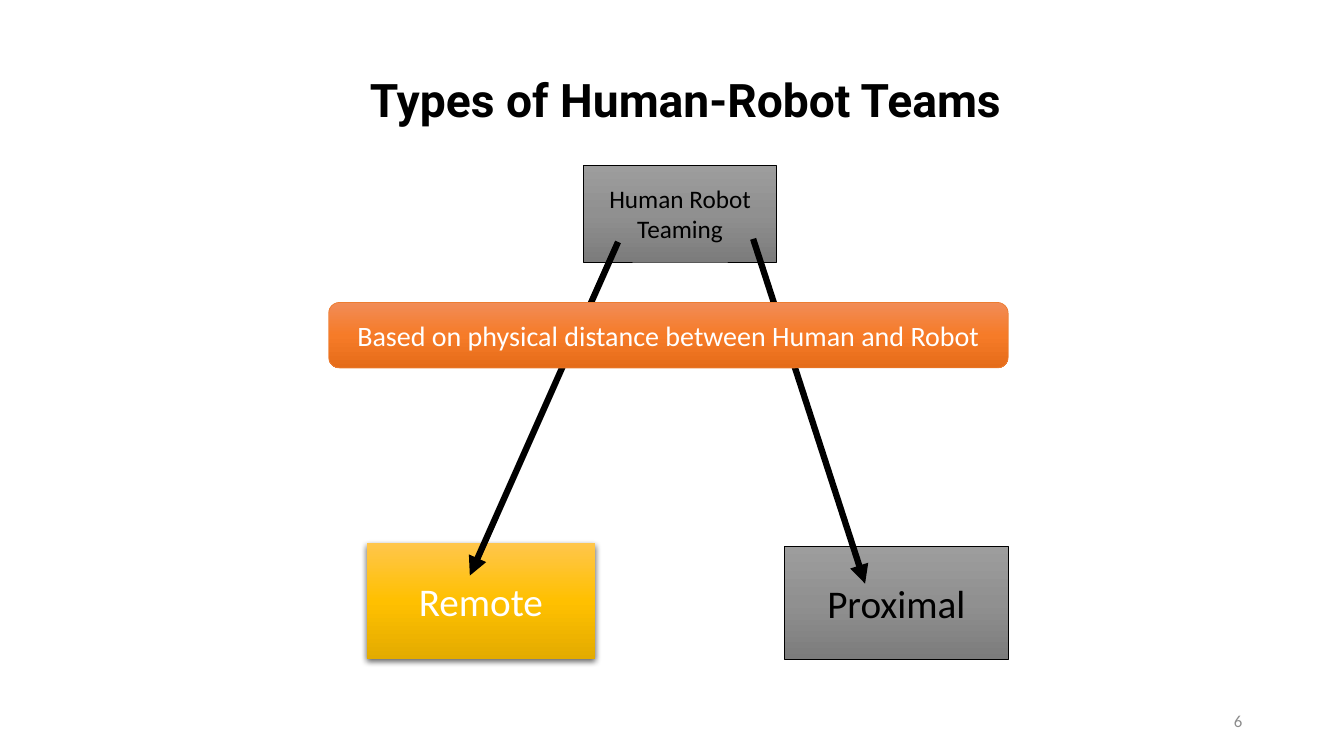
import copy

import lxml.etree
import pptx
import pptx.dml.color
import pptx.enum.shapes
import pptx.enum.text
import pptx.oxml.ns
import pptx.util

SHAPE = pptx.enum.shapes.MSO_SHAPE
ALIGN = pptx.enum.text.PP_ALIGN
qn = pptx.oxml.ns.qn

EMU_PER_PX = 9144  # 100 px to the inch
SLIDE_SIZE = (1333, 750)

GREY = ("9D9D9D", "909090", "7C7C7C")
GOLD = ("FFC64B", "FFC000", "E3AB00")
ORANGE = ("F18C57", "F67B28", "E56C19")

TITLE = ("Types of Human-Robot Teams", (269, 30, 822, 144))
PAGE_NUMBER = ("6", (942, 695, 300, 40))

# text, preset, (left, top, width, height), gradient, line, font size, font colour
TEAM_BOXES = [
    ("Human Robot Teaming", SHAPE.RECTANGLE, (579, 164, 191, 96), GREY, "000000", 18, "000000"),
    ("Remote", SHAPE.RECTANGLE, (364, 539, 226, 115), GOLD, None, 28, "FFFFFF"),
    ("Proximal", SHAPE.RECTANGLE, (778, 542, 222, 112), GREY, "000000", 28, "000000"),
]
CRITERION = ("Based on physical distance between Human and Robot", SHAPE.ROUNDED_RECTANGLE,
             (326, 300, 674, 65), ORANGE, "ED7D31", 20, "FFFFFF")
ARROWS = [(613, 240, 466, 571), (747, 237, 858, 579)]


def px(*lengths):
    return [pptx.util.Emu(length * EMU_PER_PX) for length in lengths]


def rgb(colour):
    return pptx.dml.color.RGBColor.from_string(colour)


def write(shape, text, align, size, colour, font_name="Calibri"):
    frame = shape.text_frame
    frame.word_wrap = True
    frame.auto_size = pptx.enum.text.MSO_AUTO_SIZE.NONE
    frame.vertical_anchor = pptx.enum.text.MSO_ANCHOR.MIDDLE
    frame.text = text
    para = frame.paragraphs[0]
    para.alignment = align
    para.font.name = font_name
    para.font.size = pptx.util.Pt(size)
    para.font.color.rgb = rgb(colour)
    return para


def fill_gradient(shape, colours):
    """Fill with three evenly spaced stops, from top to bottom."""
    shape.fill.gradient()
    shape.fill.gradient_angle = 270
    stop_list = shape._element.spPr.find(".//" + qn("a:gsLst"))
    stop_list.insert(1, copy.deepcopy(stop_list[0]))
    for index, (stop, colour) in enumerate(zip(shape.fill.gradient_stops, colours)):
        stop.position = index / 2
        stop.color.rgb = rgb(colour)


def add_drop_shadow(shape):
    effects = shape._element.spPr.find(qn("a:effectLst"))
    shadow = lxml.etree.SubElement(effects, qn("a:outerShdw"), blurRad="57150", dist="19050",
                                   dir="5400000", algn="ctr", rotWithShape="0")
    colour = lxml.etree.SubElement(shadow, qn("a:srgbClr"), val="000000")
    lxml.etree.SubElement(colour, qn("a:alpha"), val="63000")


def add_box(page, text, preset, place, gradient, line, size, colour):
    """Draw a gradient box; one without a line gets a drop shadow."""
    box = page.shapes.add_shape(preset, *px(*place))
    box.shadow.inherit = False
    fill_gradient(box, gradient)
    if line:
        box.line.color.rgb = rgb(line)
        box.line.width = pptx.util.Pt(0.5)
    else:
        box.line.fill.background()
        add_drop_shadow(box)
    write(box, text, ALIGN.CENTER, size, colour)


def add_arrow(page, ends):
    arrow = page.shapes.add_connector(pptx.enum.shapes.MSO_CONNECTOR.STRAIGHT, *px(*ends))
    arrow.line.color.rgb = rgb("000000")
    arrow.line.width = pptx.util.Pt(4.5)
    lxml.etree.SubElement(arrow.line._get_or_add_ln(), qn("a:tailEnd"), type="triangle")
    lxml.etree.SubElement(arrow._element.spPr, qn("a:effectLst"))


def main():
    deck = pptx.Presentation()
    deck.slide_width, deck.slide_height = px(*SLIDE_SIZE)
    page = deck.slides.add_slide(deck.slide_layouts[5])

    text, place = TITLE
    title = page.shapes.title
    title.left, title.top, title.width, title.height = px(*place)
    para = write(title, text, ALIGN.CENTER, 33, "000000", "Roboto")
    para.font.bold = True
    para.line_spacing = 0.9

    for team_box in TEAM_BOXES:
        add_box(page, *team_box)
    for ends in ARROWS:
        add_arrow(page, ends)
    add_box(page, *CRITERION)

    text, place = PAGE_NUMBER
    write(page.shapes.add_textbox(*px(*place)), text, ALIGN.RIGHT, 12, "8C8C8C")

    deck.save("out.pptx")


if __name__ == "__main__":
    main()
